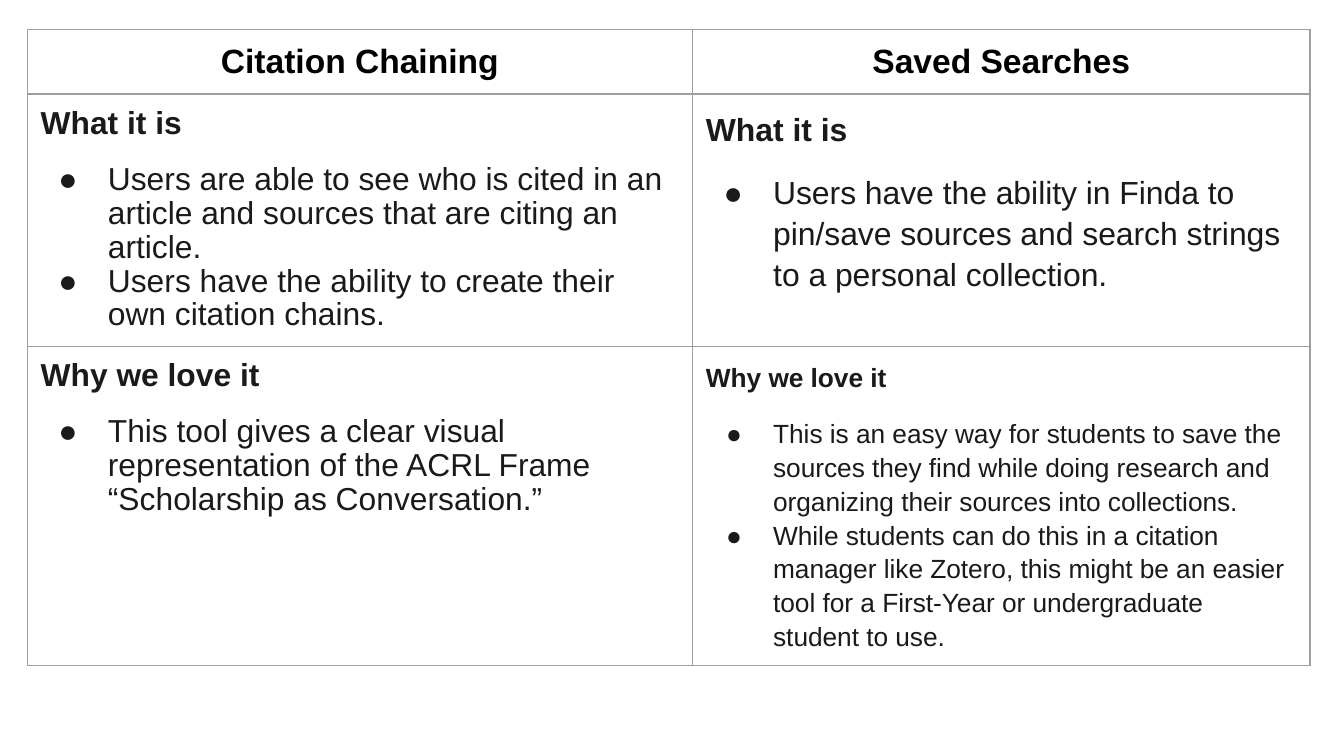
"""Build a slide comparing citation chaining with saved searches in a table."""
from lxml import etree
from pptx import Presentation
from pptx.dml.color import RGBColor
from pptx.enum.text import PP_ALIGN
from pptx.oxml.ns import qn
from pptx.util import Pt

CENTER, LEFT = PP_ALIGN.CENTER, PP_ALIGN.LEFT
BLACK, INK, RULE = "000000", "1A1A1A", "9E9E9E"
COLUMN_WIDTHS = [356.4, 330.8]
ROW_HEIGHTS = [34.3, 135, 171.2]
MARGINS = {"margin_left": Pt(7.2), "margin_right": Pt(7.2),
           "margin_top": Pt(7.2), "margin_bottom": Pt(7.2)}


def color(value):
    return RGBColor.from_string(value)


def add_colored(parent, tag, value):
    element = etree.SubElement(parent, qn(tag))
    etree.SubElement(element, qn("a:srgbClr"), val=value)
    return element


titles = ["Citation Chaining", "Saved Searches"]
sections = [
    [
        {"heading": "What it is", "size": 17, "spacing": 0.95, "hanging": 26.6, "bullets": [
            "Users are able to see who is cited in an article and sources that are citing an article.",
            "Users have the ability to create their own citation chains."]},
        {"heading": "What it is", "size": 17.1, "spacing": 1.15, "hanging": 26.6, "bullets": [
            "Users have the ability in Finda to pin/save sources and search strings "
            "to a personal collection."]},
    ],
    [
        {"heading": "Why we love it", "size": 17, "spacing": 0.95, "hanging": 26.6, "bullets": [
            "This tool gives a clear visual representation of the ACRL Frame "
            "“Scholarship as Conversation.”"]},
        {"heading": "Why we love it", "size": 14.1, "spacing": 1.15, "hanging": 25.2, "bullets": [
            "This is an easy way for students to save the sources they find while doing research "
            "and organizing their sources into collections.",
            "While students can do this in a citation manager like Zotero, this might be an easier "
            "tool for a First-Year or undergraduate student to use."]},
    ],
]
title_row = [{"heading": title, "size": 18, "spacing": 1, "bullets": [],
              "ink": BLACK, "align": CENTER} for title in titles]

deck = Presentation()
deck.slide_width, deck.slide_height = Pt(720), Pt(405)
slide = deck.slides.add_slide(deck.slide_layouts[6])
comparison = slide.shapes.add_table(
    3, 2, Pt(14.6), Pt(15.8), Pt(sum(COLUMN_WIDTHS)), Pt(sum(ROW_HEIGHTS))).table
comparison.first_row = False
comparison.horz_banding = False
for column, width in zip(comparison.columns, COLUMN_WIDTHS):
    column.width = Pt(width)
for row, height in zip(comparison.rows, ROW_HEIGHTS):
    row.height = Pt(height)

for row_index, topics in enumerate([title_row, *sections]):
    for column_index, topic in enumerate(topics):
        cell = comparison.cell(row_index, column_index)
        for name, value in MARGINS.items():
            setattr(cell, name, value)
        properties = cell._tc.get_or_add_tcPr()
        for side in ("a:lnL", "a:lnR", "a:lnT", "a:lnB"):
            border = etree.SubElement(properties, qn(side), w=str(Pt(0.75)))
            add_colored(border, "a:solidFill", RULE)
        cell.fill.background()

        ink = topic.get("ink", INK)
        for index, text in enumerate([topic["heading"], *topic["bullets"]]):
            frame = cell.text_frame
            paragraph = frame.add_paragraph() if index else frame.paragraphs[0]
            layout = {"alignment": topic.get("align", LEFT), "line_spacing": topic["spacing"],
                      "space_before": Pt(12 if index == 1 else 0)}
            for name, value in layout.items():
                setattr(paragraph, name, value)
            if index:
                bullet = paragraph._p.get_or_add_pPr()
                bullet.set("marL", str(Pt(36)))
                bullet.set("indent", str(-Pt(topic["hanging"])))
                add_colored(bullet, "a:buClr", ink)
                etree.SubElement(bullet, qn("a:buFont"), typeface="Arial")
                etree.SubElement(bullet, qn("a:buChar"), char="●")
            run = paragraph.add_run()
            run.text = text
            style = {"name": "Arial", "size": Pt(topic["size"]), "bold": index == 0}
            for name, value in style.items():
                setattr(run.font, name, value)
            run.font.color.rgb = color(ink)

deck.save("out.pptx")
